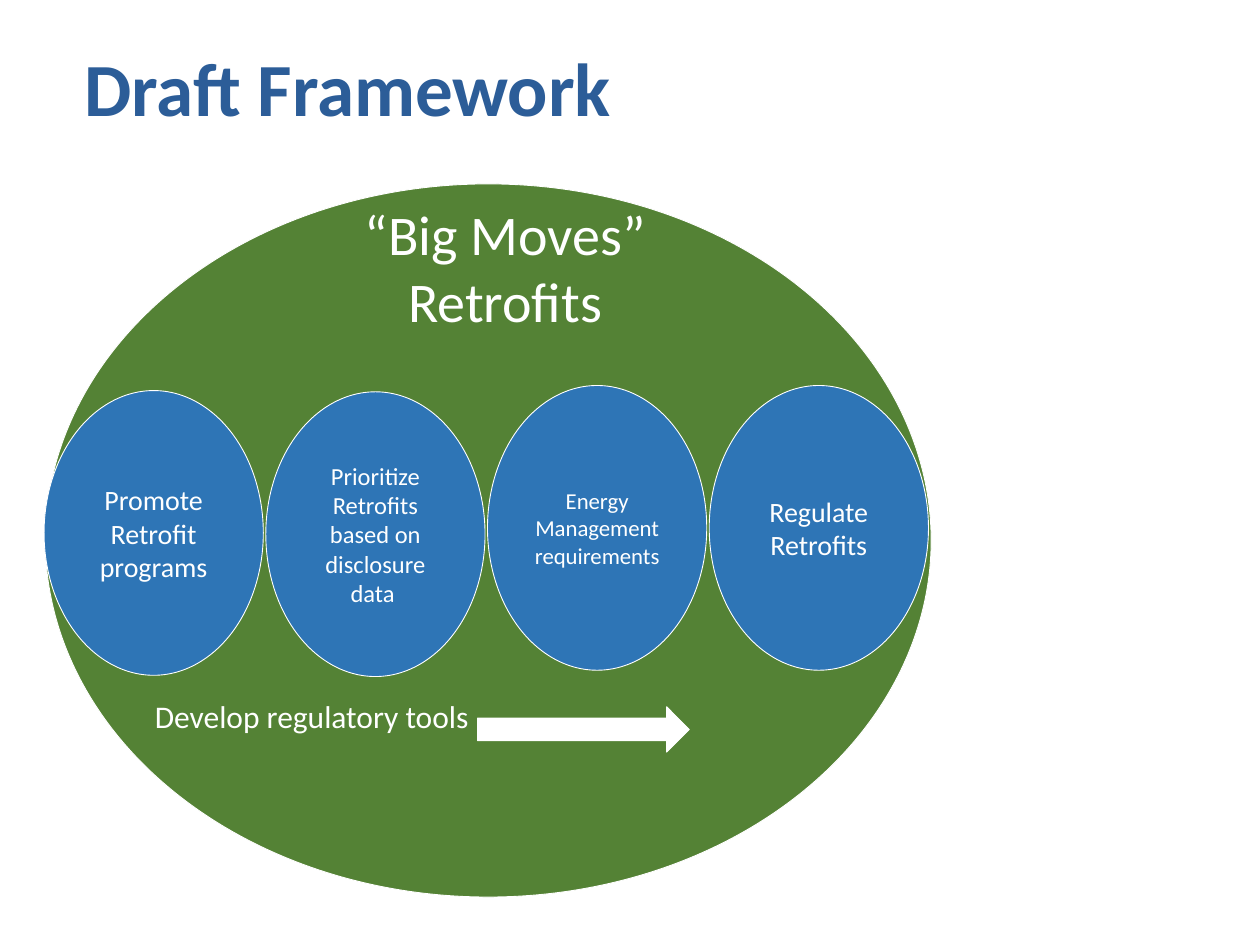
"""Build the Draft Framework slide on retrofit policy moves."""
from dataclasses import dataclass

from pptx import Presentation
from pptx.dml.color import RGBColor
from pptx.enum.shapes import MSO_SHAPE
from pptx.enum.text import MSO_ANCHOR, MSO_AUTO_SIZE, PP_ALIGN
from pptx.shapes.autoshape import Shape
from pptx.slide import Slide
from pptx.text.text import TextFrame
from pptx.util import Pt

OVAL, ARROW = MSO_SHAPE.OVAL, MSO_SHAPE.RIGHT_ARROW
LEFT, CENTER = PP_ALIGN.LEFT, PP_ALIGN.CENTER
MIDDLE, TOP = MSO_ANCHOR.MIDDLE, MSO_ANCHOR.TOP
GROW, FIXED = MSO_AUTO_SIZE.SHAPE_TO_FIT_TEXT, MSO_AUTO_SIZE.NONE

COLORS = {"title": "2C5D98", "field": "548235", "move": "2E75B6", "white": "FFFFFF"}
FONT = "Calibri"
MOVE_LEFT, MOVE_PITCH = 25.2, 126.7
MOVE_WIDTH, MOVE_HEIGHT = 125.3, 162.7


@dataclass(frozen=True)
class Box:
    left: float
    top: float
    width: float
    height: float

    def lengths(self) -> tuple[Pt, Pt, Pt, Pt]:
        return Pt(self.left), Pt(self.top), Pt(self.width), Pt(self.height)


@dataclass(frozen=True)
class Move:
    top: float
    size: float
    lines: tuple[str, ...]


MOVES = (
    Move(223.2, 16, ("Promote Retrofit programs",)),
    Move(223.9, 14, ("Prioritize Retrofits based on disclosure data ",)),
    Move(220.3, 13, ("Energy Management", "requirements")),
    Move(220.3, 16, ("Regulate Retrofits",)),
)


def write_lines(frame: TextFrame, lines: tuple[str, ...], size: float,
                alignment: PP_ALIGN = CENTER, color: str = "white", bold: bool = False) -> None:
    frame.word_wrap = True
    for index, line in enumerate(lines):
        paragraph = frame.add_paragraph() if index else frame.paragraphs[0]
        paragraph.alignment = alignment
        run = paragraph.add_run()
        run.text = line
        run.font.name = FONT
        run.font.size = Pt(size)
        run.font.bold = bold
        run.font.color.rgb = RGBColor.from_string(COLORS[color])


def add_outlined_shape(slide: Slide, kind: MSO_SHAPE, box: Box, fill: str) -> Shape:
    shape = slide.shapes.add_shape(kind, *box.lengths())
    shape.shadow.inherit = False
    shape.fill.solid()
    shape.fill.fore_color.rgb = RGBColor.from_string(COLORS[fill])
    shape.line.color.rgb = RGBColor.from_string(COLORS["white"])
    shape.line.width = Pt(0.5)
    return shape


def add_label(slide: Slide, box: Box, lines: tuple[str, ...], size: float,
              alignment: PP_ALIGN) -> None:
    frame = slide.shapes.add_textbox(*box.lengths()).text_frame
    frame.auto_size = GROW
    frame.vertical_anchor = TOP
    write_lines(frame, lines, size, alignment)


def add_move(slide: Slide, index: int, move: Move) -> None:
    box = Box(MOVE_LEFT + index * MOVE_PITCH, move.top, MOVE_WIDTH, MOVE_HEIGHT)
    frame = add_outlined_shape(slide, OVAL, box, "move").text_frame
    frame.vertical_anchor = MIDDLE
    write_lines(frame, move.lines, move.size)


def format_title(slide: Slide) -> None:
    title = slide.shapes.title
    title.left, title.top, title.width, title.height = Box(41, 0.7, 643.7, 104.4).lengths()
    frame = title.text_frame
    frame.auto_size = FIXED
    frame.vertical_anchor = MIDDLE
    write_lines(frame, ("Draft Framework",), 42.9, LEFT, "title", True)
    frame.paragraphs[0].line_spacing = 0.9


def main() -> None:
    presentation = Presentation()
    presentation.slide_width, presentation.slide_height = Pt(720), Pt(540)
    slide = presentation.slides.add_slide(presentation.slide_layouts[5])
    format_title(slide)
    add_outlined_shape(slide, OVAL, Box(25.9, 105.1, 506.2, 407.5), "field")
    add_label(slide, Box(182.9, 110.2, 211.7, 85), ("“Big Moves”", "Retrofits"), 32, CENTER)
    for index, move in enumerate(MOVES):
        add_move(slide, index, move)
    add_label(slide, Box(81.4, 394.6, 204.5, 28.8), ("Develop regulatory tools",), 18, LEFT)
    add_outlined_shape(slide, ARROW, Box(272.9, 403.9, 121, 25.9), "white")
    presentation.save("out.pptx")


if __name__ == "__main__":
    main()
